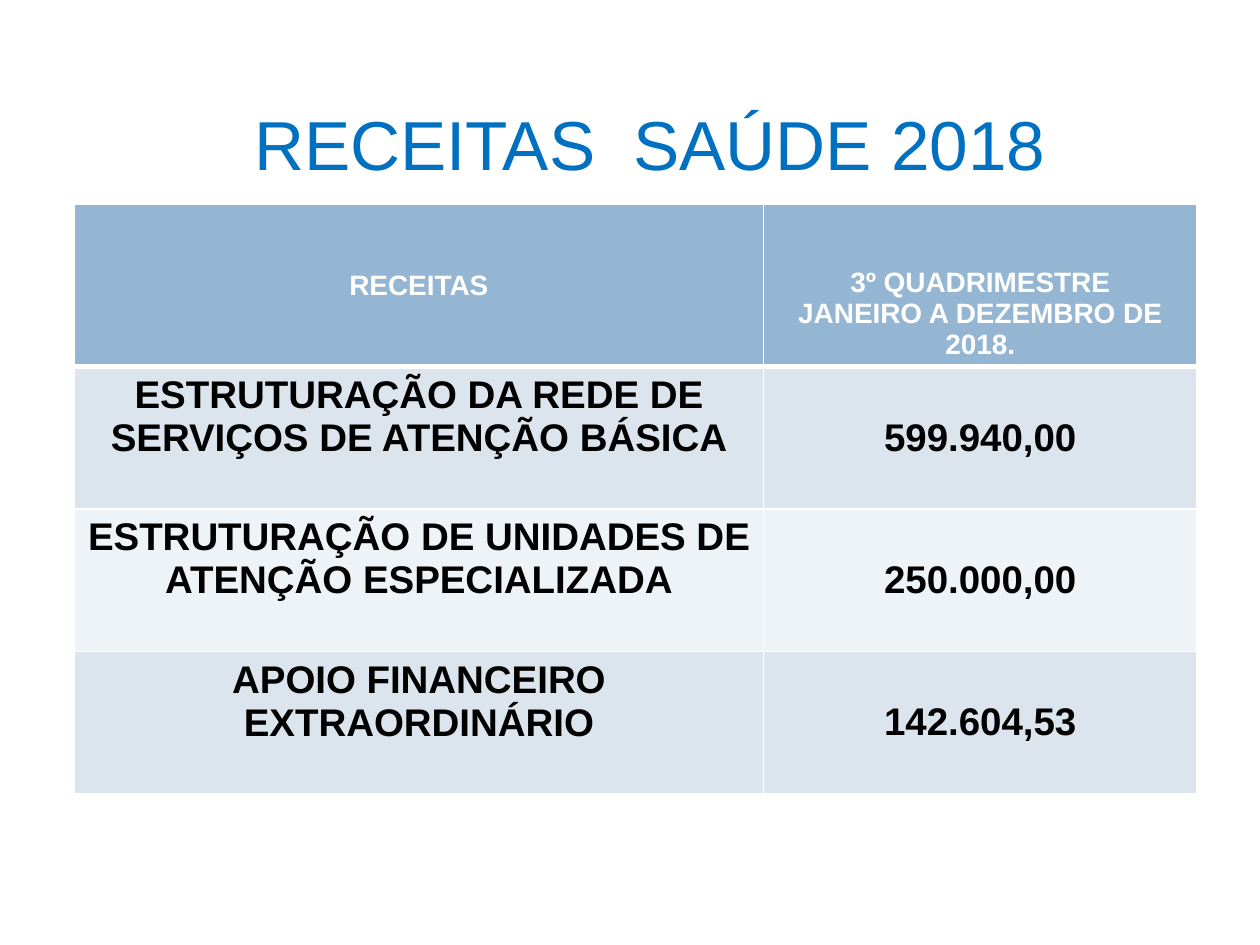
from dataclasses import dataclass

from lxml import etree
from pptx import Presentation
from pptx.dml.color import RGBColor
from pptx.enum.text import MSO_ANCHOR, PP_ALIGN
from pptx.oxml.ns import qn
from pptx.util import Inches, Pt

CENTER = PP_ALIGN.CENTER
MIDDLE, BOTTOM = MSO_ANCHOR.MIDDLE, MSO_ANCHOR.BOTTOM
WHITE = RGBColor(0xFF, 0xFF, 0xFF)
BLACK = RGBColor(0, 0, 0)
BLUE = RGBColor(0x00, 0x70, 0xC0)
HEADER = RGBColor(0x94, 0xB6, 0xD2)
BANDS = RGBColor(0xDC, 0xE5, 0xEE), RGBColor(0xEE, 0xF3, 0xF7)
FONT = "Arial"
COLS = 5.47, 3.44
HEADER_H, ROW_H = 1.29, 1.13


@dataclass
class Revenue:
    name: str
    amount: str


REVENUES = [
    Revenue("ESTRUTURAÇÃO DA REDE DE SERVIÇOS DE ATENÇÃO BÁSICA", "599.940,00"),
    Revenue("ESTRUTURAÇÃO DE UNIDADES DE ATENÇÃO ESPECIALIZADA", "250.000,00"),
    Revenue("APOIO FINANCEIRO EXTRAORDINÁRIO", "142.604,53"),
]


def write(tf, text: str, *, size: float, color: RGBColor, bold: bool = False) -> None:
    tf.word_wrap = True
    for i, line in enumerate(text.split("\n")):
        p = tf.paragraphs[0] if i == 0 else tf.add_paragraph()
        p.alignment = CENTER
        r = p.add_run()
        r.text = line
        r.font.name, r.font.size, r.font.bold = FONT, Pt(size), bold
        r.font.color.rgb = color


def set_borders(cell, bottom: float, top: float) -> None:
    tc_pr = cell._tc.get_or_add_tcPr()
    widths = {"a:lnL": 1, "a:lnR": 1, "a:lnT": top, "a:lnB": bottom}
    for i, (tag, width) in enumerate(widths.items()):
        ln = etree.Element(qn(tag), w=str(Pt(width)))
        fill = etree.SubElement(ln, qn("a:solidFill"))
        etree.SubElement(fill, qn("a:srgbClr"), val=str(WHITE))
        tc_pr.insert(i, ln)


def fill_cell(cell, text: str, *, fill: RGBColor, size: float, color: RGBColor,
              anchor=MIDDLE, bottom_margin: float = 0.05,
              top: float = 1, bottom: float = 1) -> None:
    cell.fill.solid()
    cell.fill.fore_color.rgb = fill
    cell.vertical_anchor = anchor
    cell.margin_left = cell.margin_right = Inches(0.07)
    cell.margin_bottom = Inches(bottom_margin)
    write(cell.text_frame, text, size=size, color=color, bold=True)
    set_borders(cell, bottom, top)


def add_revenue_table(s) -> None:
    height = HEADER_H + ROW_H * len(REVENUES)
    table = s.shapes.add_table(len(REVENUES) + 1, len(COLS), Inches(0.59), Inches(1.62),
                               Inches(sum(COLS)), Inches(height)).table
    for col, width in zip(table.columns, COLS):
        col.width = Inches(width)
    for i, row in enumerate(table.rows):
        row.height = Inches(ROW_H if i else HEADER_H)

    header = dict(fill=HEADER, size=16, color=WHITE, bottom=3)
    fill_cell(table.cell(0, 0), "RECEITAS", **header)
    fill_cell(table.cell(0, 1), "3º QUADRIMESTRE\nJANEIRO A DEZEMBRO DE 2018.",
              anchor=BOTTOM, **header)
    for i, revenue in enumerate(REVENUES, 1):
        body = dict(fill=BANDS[(i - 1) % 2], size=22, color=BLACK, top=3 if i == 1 else 1)
        fill_cell(table.cell(i, 0), revenue.name, bottom_margin=0.39, **body)
        fill_cell(table.cell(i, 1), revenue.amount, **body)


def main() -> None:
    prs = Presentation()
    prs.slide_width, prs.slide_height = Inches(10), Inches(7.5)
    s = prs.slides.add_slide(prs.slide_layouts[5])
    title = s.shapes.title
    title.left, title.top = Inches(0.62), Inches(0.78)
    title.width, title.height = Inches(9.08), Inches(0.71)
    title.text_frame.vertical_anchor = MIDDLE
    write(title.text_frame, "RECEITAS  SAÚDE 2018", size=39.6, color=BLUE)
    add_revenue_table(s)
    prs.save("out.pptx")


if __name__ == "__main__":
    main()
